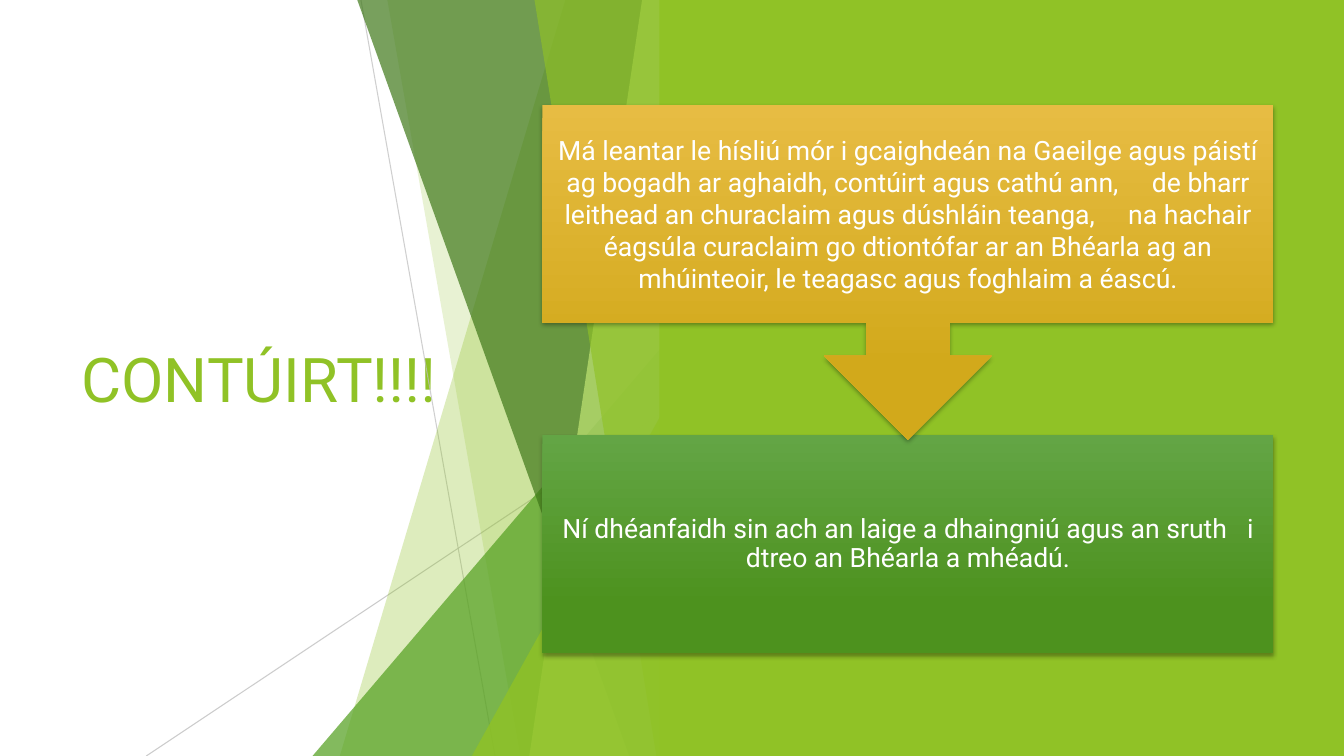
from lxml import etree
from pptx import Presentation
from pptx.dml.color import RGBColor
from pptx.enum.shapes import MSO_CONNECTOR as Connector, MSO_SHAPE as Shape
from pptx.enum.text import MSO_ANCHOR as Anchor, PP_ALIGN as Align
from pptx.oxml.ns import qn
from pptx.util import Inches, Pt

# Content
FONT = "Roboto"
COLORS = {"lime": "90C226", "green": "54A021", "dark": "3F7819", "pale": "C0E474",
          "grey": "BFBFBF", "white": "FFFFFF", "black": "000000",
          "gold_top": "E7BC43", "gold_base": "D2A91B",
          "leaf_top": "63A545", "leaf_base": "4D921E"}
TITLE = "CONTÚIRT!!!!"

# Each text is a list of phrases with the extra gap in points after each phrase
DANGER = [("Má leantar le hísliú mór i gcaighdeán na Gaeilge agus páistí ag bogadh ar "
           "aghaidh, contúirt agus cathú ann,", 19),
          ("de bharr leithead an churaclaim agus dúshláin teanga,", 19),
          ("na hachair éagsúla curaclaim go dtiontófar ar an Bhéarla ag an mhúinteoir, "
           "le teagasc agus foghlaim a éascú.", 0)]
RESULT = [("Ní dhéanfaidh sin ach an laige a dhaingniú agus an sruth", 9.5),
          ("i dtreo an Bhéarla a mhéadú.", 0)]

# Steps: shape, top, height, colour, line spacing, phrases (back to front)
STEP_LEFT, STEP_WIDTH = 5.38, 7.25
STEPS = [(Shape.RECTANGLE, 4.32, 2.16, "leaf", 0.9, RESULT),
         (Shape.DOWN_ARROW_CALLOUT, 1.04, 3.32, "gold", 1.0, DANGER)]

# Facets share a right edge; slanted ones give top-left x and bottom-left x,
# triangles give left x and top y
EDGE, TOP, BOTTOM = 6.66, -0.01, 7.5
RAYS = [((3.58, 0), (4.91, 7.5), 75), ((6.66, 4.03), (1.45, 7.5), 80)]
FACETS = [("slant", 5.61, 3.37, "lime", 30),
          ("slant", 3.84, 5.16, "lime", 20),
          ("triangle", 3.1, 3.33, "green", 72),
          ("slant", 3.54, 6.24, "dark", 70),
          ("slant", 6.37, 5.25, "pale", 70),
          ("slant", 5.3, 6.51, "lime", 65),
          ("triangle", 4.68, 3.93, "lime", 80)]


def rgb(name):
    return RGBColor.from_string(COLORS[name])


def set_alpha(parent, percent):
    color = next(parent.iter(qn("a:srgbClr")))
    etree.SubElement(color, qn("a:alpha")).set("val", str(percent * 1000))


def paint(shape, color, alpha=None):
    shape.shadow.inherit = False
    shape.line.fill.background()
    shape.fill.solid()
    shape.fill.fore_color.rgb = rgb(color)
    if alpha:
        set_alpha(shape.fill._xPr.find(qn("a:solidFill")), alpha)


def add_run(paragraph, text, size, color):
    run = paragraph.add_run()
    run.text = text
    run.font.name, run.font.size = FONT, Pt(size)
    run.font.color.rgb = rgb(color)
    return run


def add_shadow(shape):
    shape.shadow.inherit = False
    effects = shape._element.spPr.find(qn("a:effectLst"))
    outer = etree.SubElement(effects, qn("a:outerShdw"), blurRad=str(Pt(3)),
                             dist=str(Pt(2)), dir="5400000", rotWithShape="0")
    etree.SubElement(outer, qn("a:srgbClr"), val=COLORS["black"])
    set_alpha(outer, 35)


prs = Presentation()
prs.slide_width, prs.slide_height = Inches(13.33), Inches(7.5)
slide = prs.slides.add_slide(prs.slide_layouts[6])
shapes = slide.shapes

# Title
title = shapes.add_textbox(Inches(0.71), Inches(1.51), Inches(3.88), Inches(4.48))
title.text_frame.word_wrap = True
title.text_frame.vertical_anchor = Anchor.MIDDLE
add_run(title.text_frame.paragraphs[0], TITLE, 44, "lime")

# Thin rays
for start, end, alpha in RAYS:
    ray = shapes.add_connector(Connector.STRAIGHT, *map(Inches, start + end))
    ray.line.width = Pt(0.75)
    ray.line.color.rgb = rgb("grey")
    set_alpha(ray.line._ln, alpha)
    etree.SubElement(ray._element.spPr, qn("a:effectLst"))

# Translucent facets
for kind, first, second, color, alpha in FACETS:
    if kind == "slant":
        outline = shapes.build_freeform(Inches(first), Inches(TOP))
        corners = [(EDGE, TOP), (EDGE, BOTTOM), (second, BOTTOM)]
        outline.add_line_segments([(Inches(x), Inches(y)) for x, y in corners])
        facet = outline.convert_to_shape()
    else:
        facet = shapes.add_shape(Shape.ISOSCELES_TRIANGLE, Inches(first), Inches(second),
                                 Inches(EDGE - first), Inches(BOTTOM - second))
        facet.adjustments[0] = 1
    paint(facet, color, alpha)

# Green panel
panel = shapes.add_shape(Shape.RECTANGLE, Inches(6.54), 0, Inches(6.79), Inches(7.5))
paint(panel, "lime")

# Steps
for kind, top, height, color, spacing, phrases in STEPS:
    step = shapes.add_shape(kind, Inches(STEP_LEFT), Inches(top),
                            Inches(STEP_WIDTH), Inches(height))
    step.line.fill.background()
    step.fill.gradient()
    step.fill.gradient_angle = 270
    for stop, position, end in zip(step.fill.gradient_stops, (0, 0.78), ("top", "base")):
        stop.position = position
        stop.color.rgb = rgb(f"{color}_{end}")
    add_shadow(step)

    frame = step.text_frame
    frame.word_wrap = True
    frame.vertical_anchor = Anchor.MIDDLE
    frame.margin_left = frame.margin_right = Inches(0.15)
    frame.margin_top = frame.margin_bottom = Inches(0.15)
    paragraph = frame.paragraphs[0]
    paragraph.alignment, paragraph.line_spacing = Align.CENTER, spacing
    for phrase, gap in phrases:
        add_run(paragraph, phrase, 19, "white")
        if gap:
            space = add_run(paragraph, " ", 19, "white")
            space.font._element.set("spc", str(int(gap * 100)))

prs.save("out.pptx")
